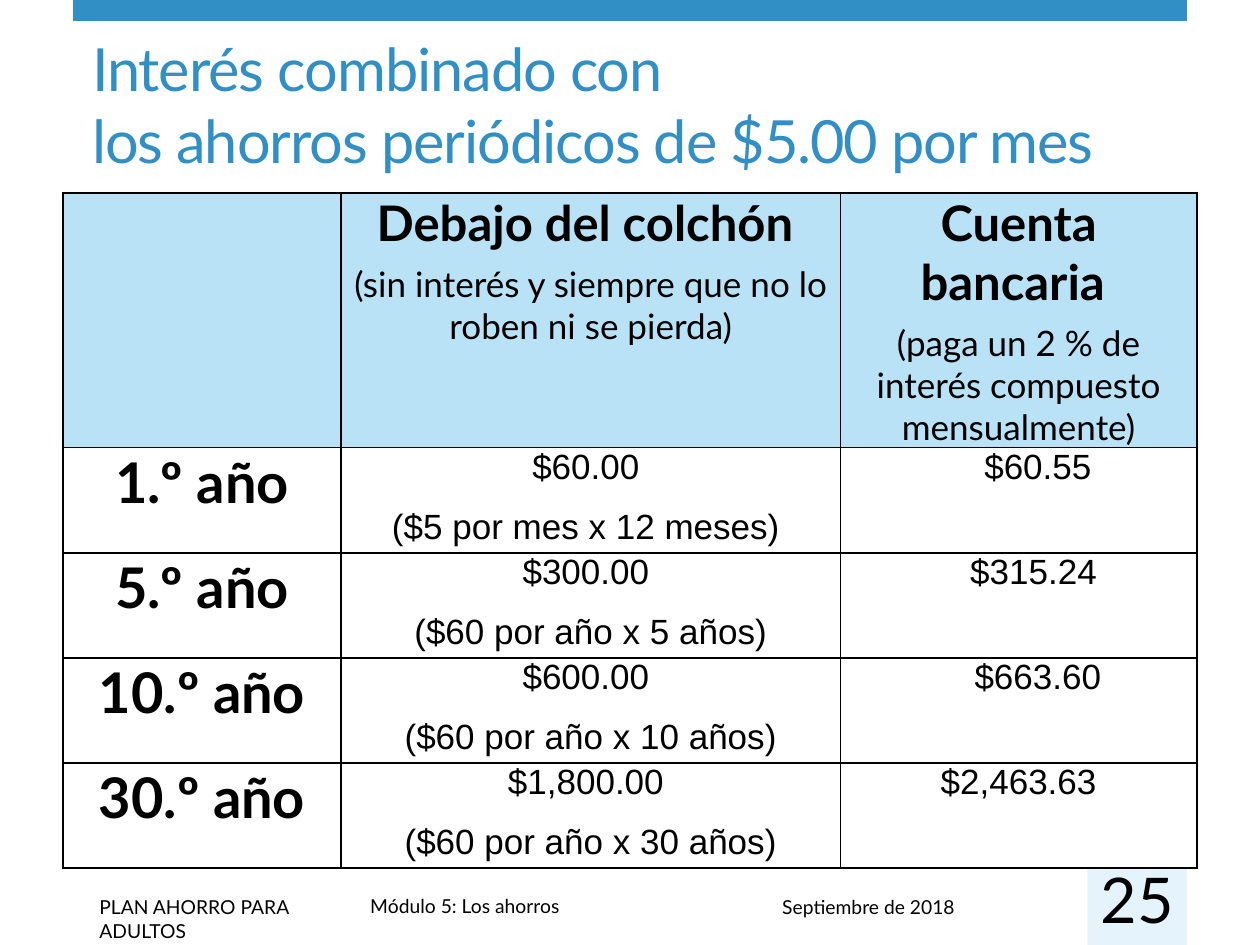
from lxml import etree
from pptx import Presentation
from pptx import util as u
from pptx.dml.color import RGBColor
from pptx.enum import shapes, text
from pptx.oxml import ns

Pt = u.Pt
COLORS = {"blue": "318FC5", "pale": "E4F3FC", "header": "BAE2F7", "white": "FFFFFF", "black": "000000"}
COLUMNS = (159, 285.2, 203.8)
HEADER_HEIGHT, ROW_HEIGHT = 145.4, 56.7
HEADERS = (
    ("Debajo del colchón ", "(sin interés y siempre que no lo roben ni se pierda)"),
    ("Cuenta bancaria ", "(paga un 2 % de interés compuesto mensualmente)"),
)
YEARS = (
    ("1.º año", "$60.00 ", "($5 por mes x 12 meses) ", "$60.55", 22),
    ("5.º año", "$300.00 ", "($60 por año x 5 años)", "$315.24", 17),
    ("10.º año", "$600.00 ", "($60 por año x 10 años)", "$663.60", 22),
    ("30.º año", "$1,800.00 ", "($60 por año x 30 años)", "$2,463.63", 0),
)
HEADING = {"size": Pt(28), "bold": True, "name": "Lato"}
NOTE = {"size": Pt(20), "bold": False, "name": "Lato"}
YEAR = {"size": Pt(32), "bold": True, "name": "Lato"}
AMOUNT = {"size": Pt(20), "bold": False, "name": "Arial"}
FOOTER = {"size": Pt(11), "name": "Lato"}
NUMBER = {"size": Pt(36), "name": "Lato"}
TITLE = {"size": Pt(34), "name": "Lato"}


def color(name):
    """Return the named colour."""
    return RGBColor.from_string(COLORS[name])


def apply(target, values):
    """Set each attribute in a dict of format values."""
    for name, value in values.items():
        setattr(target, name, value)


def write(paragraph, words, font, ink="black", **layout):
    """Put one formatted run in a paragraph."""
    run = paragraph.add_run()
    run.text = words
    apply(run.font, font)
    run.font.color.rgb = color(ink)
    apply(paragraph, layout)
    return run


def add_bar(slide, box, fill):
    """Add a plain filled rectangle."""
    shape = slide.shapes.add_shape(shapes.MSO_SHAPE.RECTANGLE, *map(Pt, box))
    shape.shadow.inherit = False
    shape.fill.solid()
    shape.fill.fore_color.rgb = color(fill)
    shape.line.fill.background()


def add_label(slide, box, words, font, **frame_values):
    """Add a wrapping text box and return its paragraph."""
    frame = slide.shapes.add_textbox(*map(Pt, box)).text_frame
    apply(frame, {"word_wrap": True, **frame_values})
    write(frame.paragraphs[0], words, font)
    return frame.paragraphs[0]


def add_title(slide):
    """Place and fill the title placeholder."""
    title = slide.shapes.title
    apply(title, {"left": Pt(45.4), "top": Pt(34.6), "width": Pt(590.4), "height": Pt(69.1)})
    frame = title.text_frame
    apply(frame, {"vertical_anchor": text.MSO_ANCHOR.BOTTOM, "auto_size": text.MSO_AUTO_SIZE.NONE,
                  "word_wrap": True})
    paragraph = frame.paragraphs[0]
    lines = ("Interés combinado con", "los ahorros periódicos de $5.00 por mes")
    for index, line in enumerate(lines):
        if index:
            paragraph.add_line_break()
        run = write(paragraph, line, TITLE, "blue", alignment=text.PP_ALIGN.LEFT)
        run.font._element.set("spc", "-60")


def add_borders(cell):
    """Draw thin black lines on all sides of a cell."""
    properties = cell._tc.get_or_add_tcPr()
    for index, side in enumerate(("lnL", "lnR", "lnT", "lnB")):
        line = etree.Element(ns.qn("a:" + side), w=str(Pt(1)))
        fill = etree.SubElement(line, ns.qn("a:solidFill"))
        etree.SubElement(fill, ns.qn("a:srgbClr"), val=COLORS["black"])
        properties.insert(index, line)


def fill_cell(cell, lines, gap, fill, indent=0):
    """Style a cell and write its centred lines."""
    apply(cell, {"margin_left": Pt(5), "margin_right": Pt(5), "margin_top": 0, "margin_bottom": 0})
    cell.fill.solid()
    cell.fill.fore_color.rgb = color(fill)
    add_borders(cell)
    for index, (words, font) in enumerate(lines):
        frame = cell.text_frame
        paragraph = frame.add_paragraph() if index else frame.paragraphs[0]
        write(paragraph, words, font, alignment=text.PP_ALIGN.CENTER,
              space_before=Pt(gap if index else 0), space_after=Pt(gap))
        if indent:
            paragraph._p.get_or_add_pPr().set("marL", str(Pt(indent)))


def add_savings_table(slide):
    """Add the table that compares both ways of saving."""
    heights = [HEADER_HEIGHT] + [ROW_HEIGHT] * len(YEARS)
    table = slide.shapes.add_table(len(heights), len(COLUMNS), Pt(36), Pt(110.4),
                                   Pt(sum(COLUMNS)), Pt(sum(heights))).table
    table.horz_banding = False
    for column, width in zip(table.columns, COLUMNS):
        column.width = Pt(width)
    for row, height in zip(table.rows, heights):
        row.height = Pt(height)
    fill_cell(table.cell(0, 0), (), 0, "header")
    for column, (heading, note) in enumerate(HEADERS, 1):
        fill_cell(table.cell(0, column), ((heading, HEADING), (note, NOTE)), 3, "header")
    for row, (year, saved, sum_note, balance, indent) in enumerate(YEARS, 1):
        fill_cell(table.cell(row, 0), ((year, YEAR),), 6, "white")
        fill_cell(table.cell(row, 1), ((saved, AMOUNT), (sum_note, AMOUNT)), 6, "white")
        fill_cell(table.cell(row, 2), ((balance, AMOUNT),), 6, "white", indent)


def main():
    """Build and save the slide."""
    presentation = Presentation()
    apply(presentation, {"slide_width": Pt(720), "slide_height": Pt(540)})
    slide = presentation.slides.add_slide(presentation.slide_layouts[5])
    add_bar(slide, (41.8, 0, 636.5, 12), "blue")
    add_bar(slide, (621.4, 495.4, 56.9, 44.6), "pale")
    add_label(slide, (49.7, 508.3, 150.5, 20.9), "PLAN AHORRO PARA ADULTOS", FOOTER)
    add_label(slide, (204.5, 507.6, 407.5, 20.9), "Módulo 5: Los ahorros", FOOTER)
    add_label(slide, (439.9, 508.3, 181.4, 20.9), "Septiembre de 2018", FOOTER)
    add_title(slide)
    add_savings_table(slide)
    margins = dict.fromkeys(("margin_left", "margin_right", "margin_top", "margin_bottom"), 0)
    number = add_label(slide, (621.4, 491.8, 56.9, 32.4), "25", NUMBER, **margins)
    number.alignment = text.PP_ALIGN.CENTER
    presentation.save("out.pptx")


if __name__ == "__main__":
    main()
